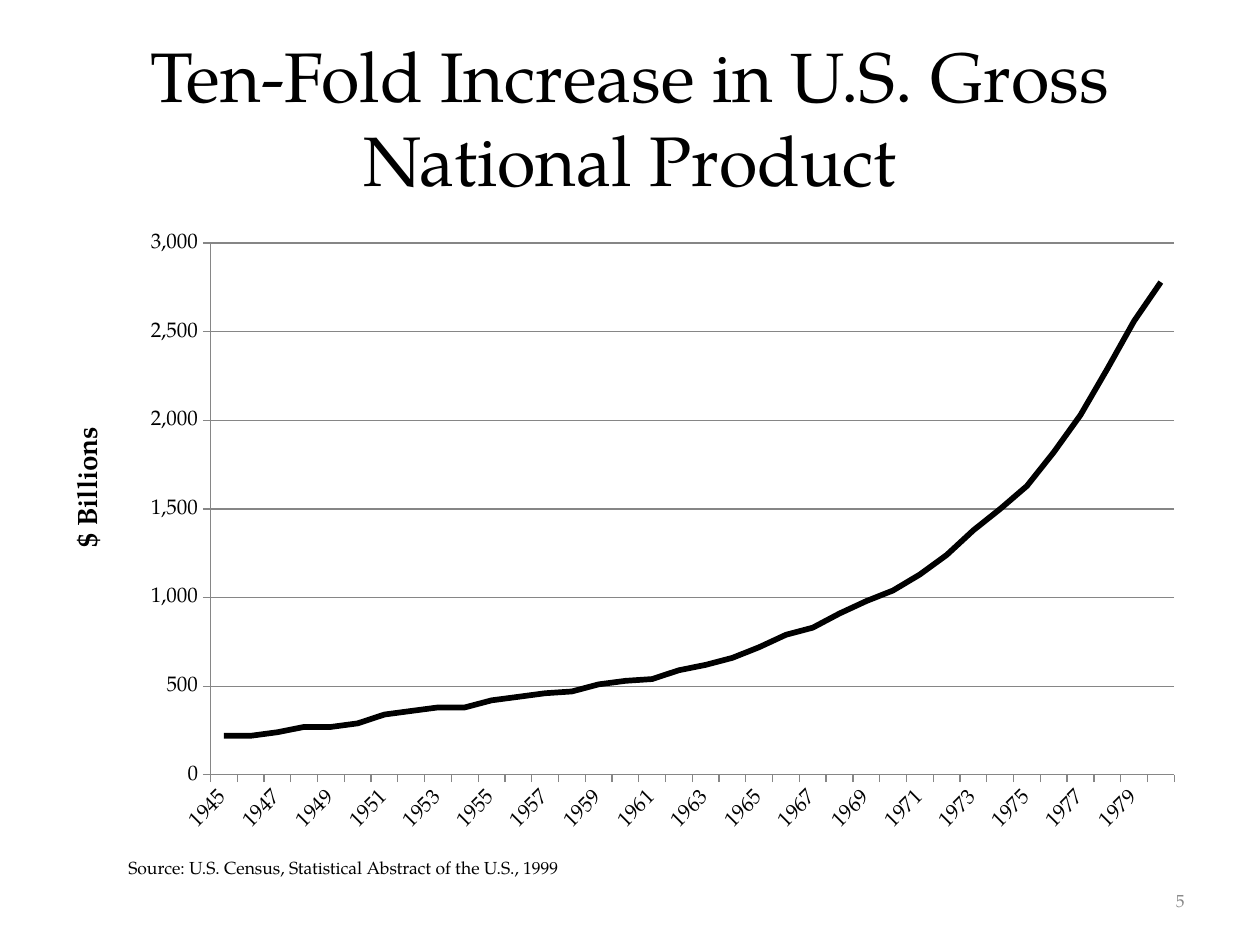
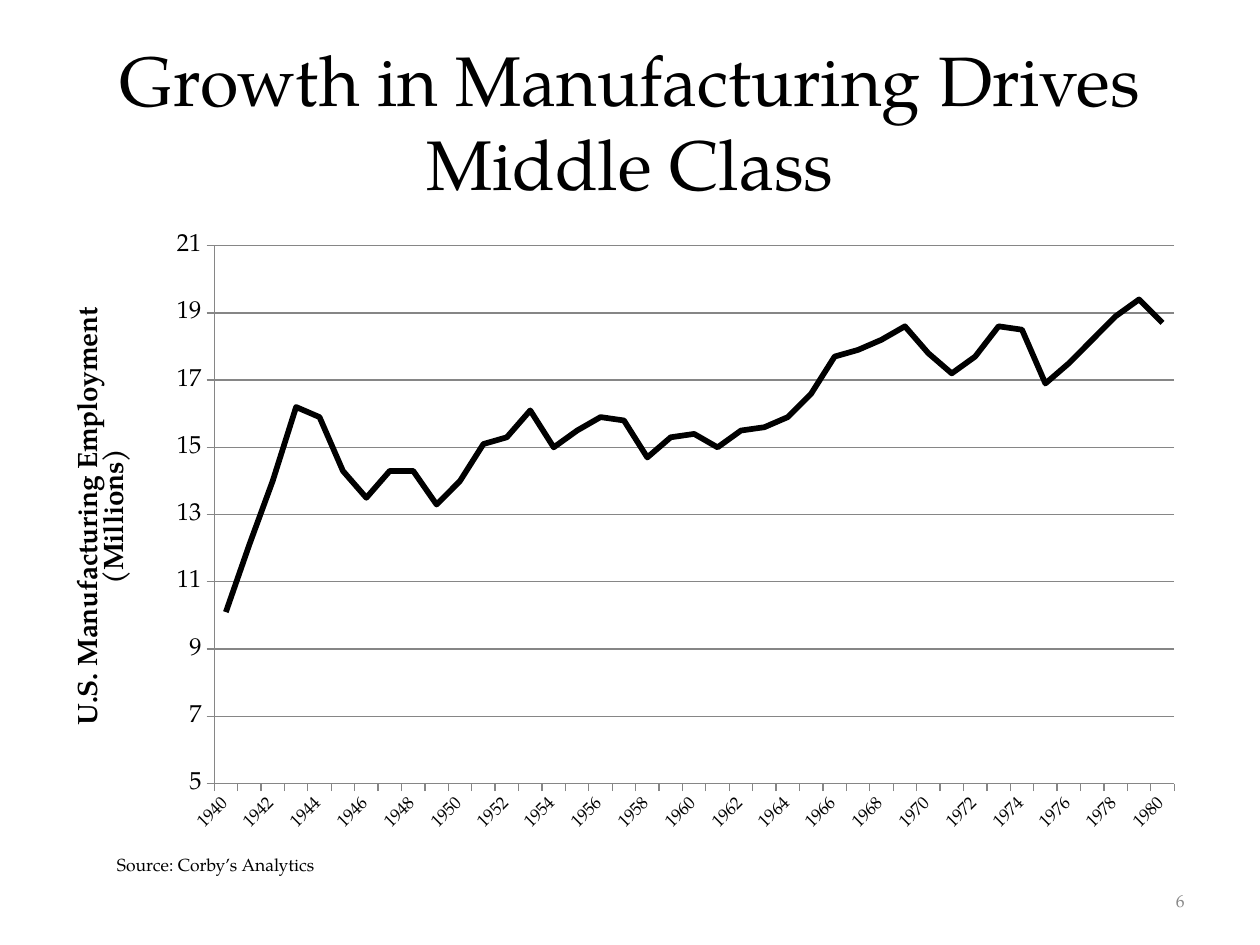
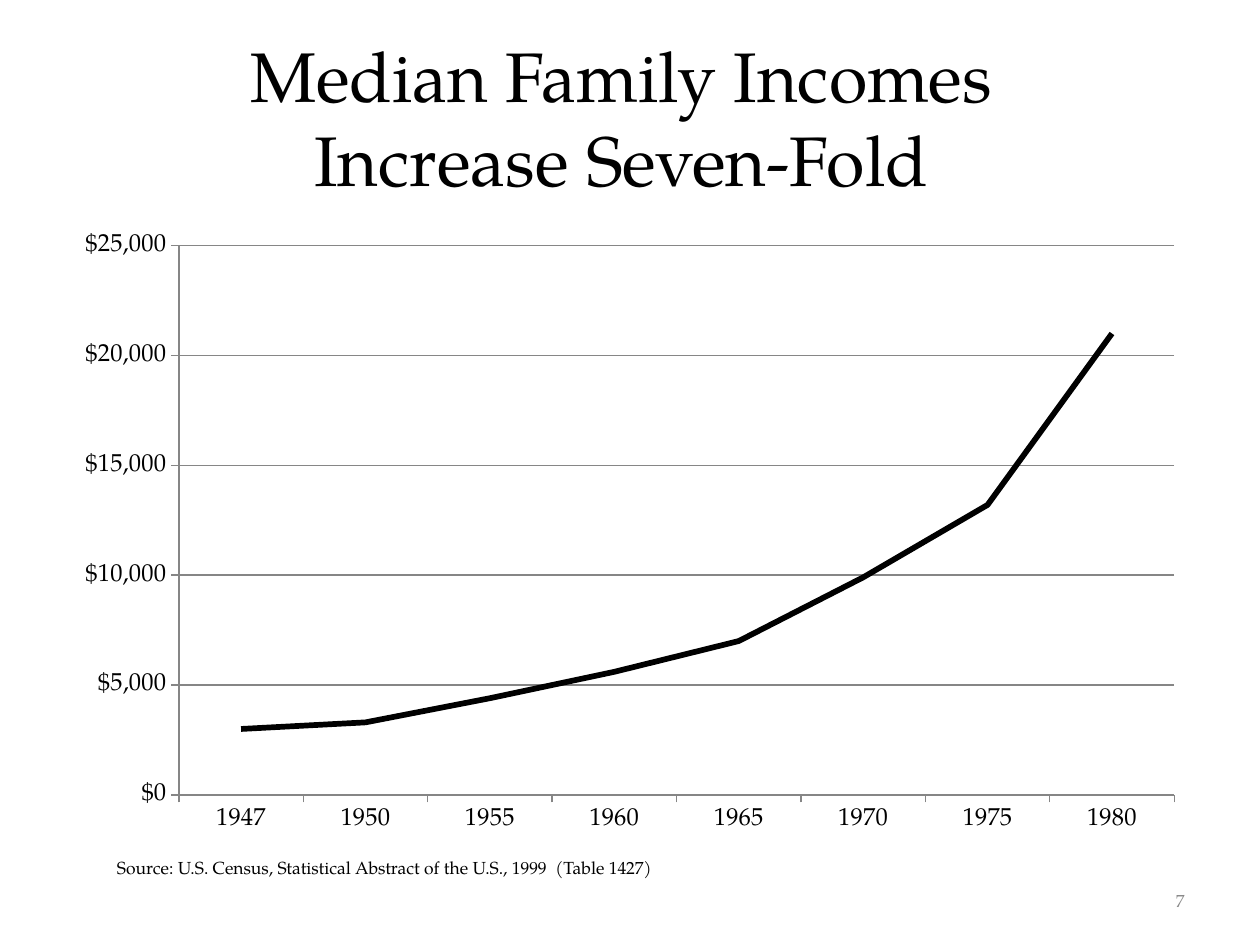
import dataclasses

import pptx
import pptx.chart.data
import pptx.dml.color
import pptx.enum.chart
import pptx.enum.text
import pptx.oxml
import pptx.oxml.ns
import pptx.util
from pptx.util import Inches


@dataclasses.dataclass(frozen=True)
class Theme:
    font: str = "TeX Gyre Pagella"
    ink: str = "000000"
    grid: str = "868686"
    page_number: str = "898989"
    title_size: int = 40
    small_size: int = 10
    axis_title_size: int = 16
    series_width: float = 3.25
    grid_width: float = 0.75


@dataclasses.dataclass(frozen=True)
class Box:
    left: float
    top: float
    width: float
    height: float

    def lengths(self):
        return [Inches(value) for value in dataclasses.astuple(self)]


@dataclasses.dataclass(frozen=True)
class LineStory:
    """Content of one chart slide; plot and axis title are relative to the chart box."""
    title: str
    source: str
    years: list
    values: list
    plot: Box
    scale: tuple
    number_format: str
    year_size: int
    value_size: int
    axis_title: str = ""
    axis_title_left: float = 0.05
    axis_title_top: float = 0
    slanted_years: bool = False
    title_top: float = 0.3
    source_left: float = 0.83
    source_top: float = 6.75
    source_width: float = 4.53


THEME = Theme()
CHART_BOX = Box(0.5, 1.75, 9, 4.95)
NUMBER_BOX = Box(7.17, 6.95, 2.33, 0.4)
FIRST_NUMBER = 5

STORIES = [
    LineStory(
        title="Ten-Fold Increase in U.S. Gross National Product",
        source="Source: U.S. Census, Statistical Abstract of the U.S., 1999",
        years=list(range(1945, 1981)),
        values=[220, 220, 240, 270, 270, 290, 340, 360, 380, 380, 420, 440,
                460, 470, 510, 530, 540, 590, 620, 660, 720, 790, 830, 910,
                980, 1040, 1130, 1240, 1380, 1500, 1630, 1820, 2030, 2290,
                2560, 2780],
        plot=Box(1.17, 0.18, 7.65, 4.22),
        scale=(0, 3000, 500),
        number_format="#,##0",
        year_size=12,
        value_size=12,
        axis_title="$ Billions",
        axis_title_top=1.6,
        slanted_years=True,
        source_left=0.92,
        source_width=3.69,
    ),
    LineStory(
        title="Growth in Manufacturing Drives Middle Class",
        source="Source: Corby’s Analytics",
        years=list(range(1940, 1981)),
        values=[10.1, 12.1, 14, 16.2, 15.9, 14.3, 13.5, 14.3, 14.3, 13.3, 14,
                15.1, 15.3, 16.1, 15, 15.5, 15.9, 15.8, 14.7, 15.3, 15.4, 15,
                15.5, 15.6, 15.9, 16.6, 17.7, 17.9, 18.2, 18.6, 17.8, 17.2,
                17.7, 18.6, 18.5, 16.9, 17.5, 18.2, 18.9, 19.4, 18.7],
        plot=Box(1.2, 0.2, 7.62, 4.27),
        scale=(5, 21, 2),
        number_format="General",
        year_size=10,
        value_size=14,
        axis_title="U.S. Manufacturing Employment (Millions)",
        axis_title_top=0.65,
        slanted_years=True,
        title_top=0.33,
        source_top=6.73,
        source_width=1.86,
    ),
    LineStory(
        title="Median Family Incomes \nIncrease Seven-Fold ",
        source="Source: U.S. Census, Statistical Abstract of the U.S., 1999"
               "  (Table 1427)",
        years=[1947, *range(1950, 1981, 5)],
        values=[3000, 3300, 4400, 5600, 7000, 9900, 13200, 21000],
        plot=Box(0.92, 0.2, 7.9, 4.36),
        scale=(0, 25000, 5000),
        number_format='"$"#,##0',
        year_size=14,
        value_size=14,
    ),
]


def style_font(font, size, color=THEME.ink, bold=False):
    font.name = THEME.font
    font.size = pptx.util.Pt(size)
    font.bold = bold
    font.color.rgb = pptx.dml.color.RGBColor.from_string(color)


def style_line(line, color, width):
    line.color.rgb = pptx.dml.color.RGBColor.from_string(color)
    line.width = pptx.util.Pt(width)


def write_text(paragraph, text, size, color=THEME.ink):
    for index, part in enumerate(text.split("\n")):
        if index:
            paragraph.add_line_break()
        run = paragraph.add_run()
        run.text = part
        style_font(run.font, size, color)


def place_title(slide, text, box):
    title = slide.shapes.title
    title.left, title.top, title.width, title.height = box.lengths()
    frame = title.text_frame
    frame.auto_size = pptx.enum.text.MSO_AUTO_SIZE.NONE
    frame.vertical_anchor = pptx.enum.text.MSO_ANCHOR.MIDDLE
    paragraph = frame.paragraphs[0]
    paragraph.alignment = pptx.enum.text.PP_ALIGN.CENTER
    write_text(paragraph, text, THEME.title_size)


def place_source(slide, text, box):
    frame = slide.shapes.add_textbox(*box.lengths()).text_frame
    frame.word_wrap = False
    frame.auto_size = pptx.enum.text.MSO_AUTO_SIZE.SHAPE_TO_FIT_TEXT
    write_text(frame.paragraphs[0], text, THEME.small_size)


def place_page_number(slide, number, box):
    frame = slide.shapes.add_textbox(*box.lengths()).text_frame
    frame.word_wrap = True
    frame.vertical_anchor = pptx.enum.text.MSO_ANCHOR.MIDDLE
    paragraph = frame.paragraphs[0]
    paragraph.alignment = pptx.enum.text.PP_ALIGN.RIGHT
    write_text(paragraph, str(number), THEME.small_size, THEME.page_number)


def manual_layout(**settings):
    parts = "".join(f'<c:{key} val="{value}"/>' for key, value in settings.items())
    return pptx.oxml.parse_xml(
        f'<c:layout {pptx.oxml.ns.nsdecls("c")}>'
        f"<c:manualLayout>{parts}</c:manualLayout></c:layout>")


def remove_layout(element):
    for layout in element.xpath("c:layout"):
        element.remove(layout)


def fix_plot_area(chart, plot, box):
    plot_area = chart.element.xpath("c:chart/c:plotArea")[0]
    remove_layout(plot_area)
    plot_area.insert(0, manual_layout(
        layoutTarget="inner", xMode="edge", yMode="edge",
        x=round(plot.left / box.width, 4), y=round(plot.top / box.height, 4),
        w=round(plot.width / box.width, 4), h=round(plot.height / box.height, 4)))


def fix_axis_title(chart, left, top, box):
    title = chart.element.xpath("c:chart/c:plotArea/c:valAx/c:title")[0]
    remove_layout(title)
    title.xpath("c:tx")[0].addnext(manual_layout(
        xMode="edge", yMode="edge",
        x=round(left / box.width, 4), y=round(top / box.height, 4)))


def slant_alternate_years(chart):
    axis = chart.element.xpath("c:chart/c:plotArea/c:catAx")[0]
    body = axis.xpath("c:txPr/a:bodyPr")[0]
    body.set("rot", "-2700000")
    body.set("vert", "horz")
    skip = pptx.oxml.parse_xml(
        f'<c:tickLblSkip {pptx.oxml.ns.nsdecls("c")} val="2"/>')
    axis.xpath("c:noMultiLvlLbl")[0].addprevious(skip)


def style_axis(axis, label_size):
    axis.major_tick_mark = pptx.enum.chart.XL_TICK_MARK.OUTSIDE
    axis.minor_tick_mark = pptx.enum.chart.XL_TICK_MARK.NONE
    style_font(axis.tick_labels.font, label_size)
    style_line(axis.format.line, THEME.grid, THEME.grid_width)


def style_value_axis(axis, story):
    style_axis(axis, story.value_size)
    axis.minimum_scale, axis.maximum_scale, axis.major_unit = story.scale
    axis.tick_labels.number_format = story.number_format
    axis.tick_labels.number_format_is_linked = False
    axis.has_major_gridlines = True
    style_line(axis.major_gridlines.format.line, THEME.grid, THEME.grid_width)
    axis.has_title = bool(story.axis_title)
    if story.axis_title:
        run = axis.axis_title.text_frame.paragraphs[0].add_run()
        run.text = story.axis_title
        style_font(run.font, THEME.axis_title_size, bold=True)


def place_line_chart(slide, story, box):
    data = pptx.chart.data.CategoryChartData()
    data.categories = [str(year) for year in story.years]
    data.add_series("Series 1", story.values)
    chart = slide.shapes.add_chart(
        pptx.enum.chart.XL_CHART_TYPE.LINE, *box.lengths(), data).chart
    chart.has_legend = False
    chart.has_title = False
    style_font(chart.font, THEME.small_size)
    chart.plots[0].vary_by_categories = False
    series = chart.plots[0].series[0]
    series.smooth = False
    series.marker.style = pptx.enum.chart.XL_MARKER_STYLE.NONE
    style_line(series.format.line, THEME.ink, THEME.series_width)
    style_axis(chart.category_axis, story.year_size)
    style_value_axis(chart.value_axis, story)
    fix_plot_area(chart, story.plot, box)
    if story.axis_title:
        fix_axis_title(chart, story.axis_title_left, story.axis_title_top, box)
    if story.slanted_years:
        slant_alternate_years(chart)


def add_chart_slide(presentation, story, number):
    slide = presentation.slides.add_slide(presentation.slide_layouts[5])
    place_title(slide, story.title, Box(0.5, story.title_top, 9, 1.25))
    place_line_chart(slide, story, CHART_BOX)
    place_source(slide, story.source, Box(
        story.source_left, story.source_top, story.source_width, 0.27))
    place_page_number(slide, number, NUMBER_BOX)


def main():
    presentation = pptx.Presentation()
    presentation.slide_width = Inches(10)
    presentation.slide_height = Inches(7.5)
    for number, story in enumerate(STORIES, FIRST_NUMBER):
        add_chart_slide(presentation, story, number)
    presentation.save("out.pptx")


if __name__ == "__main__":
    main()
